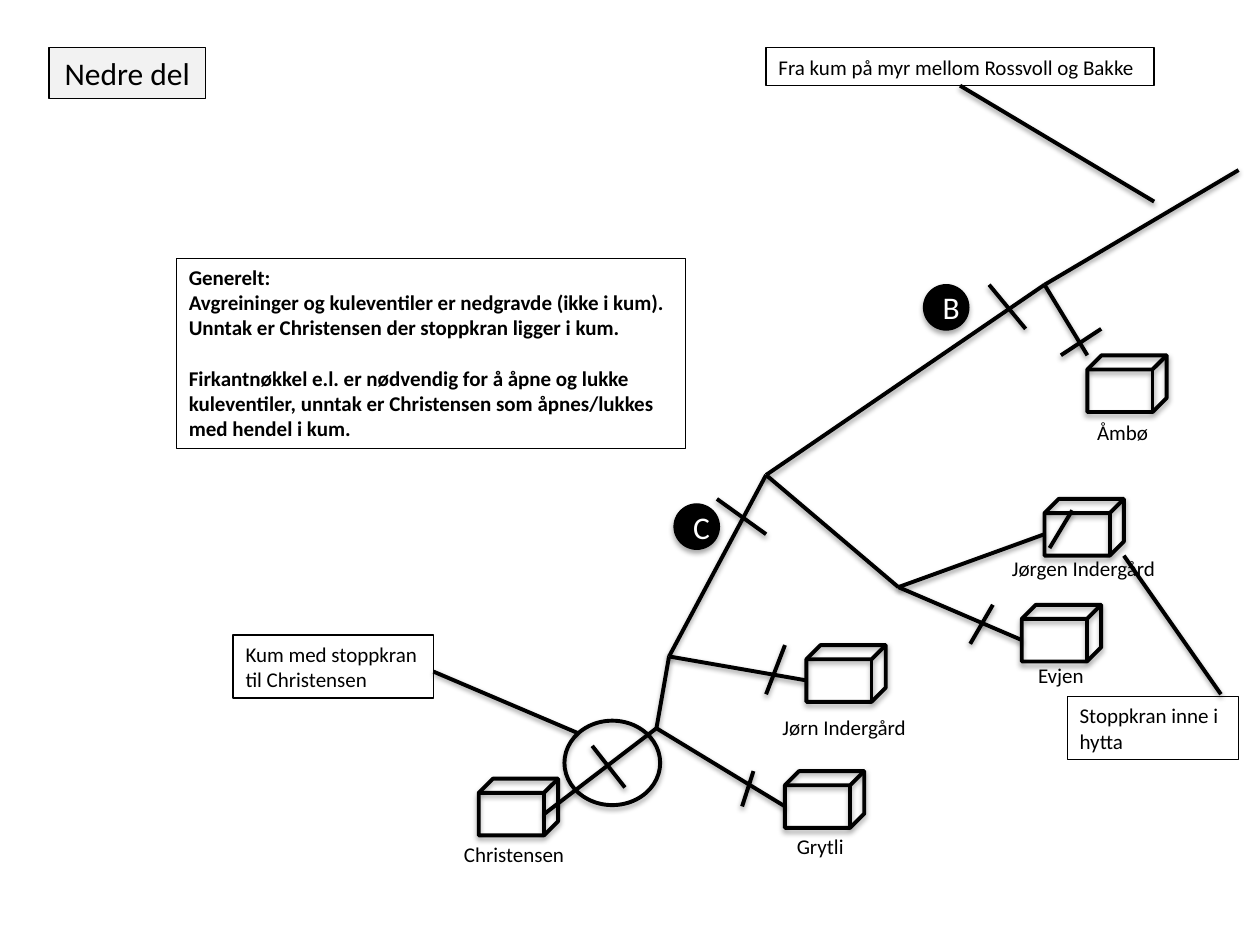
from dataclasses import dataclass
from typing import NamedTuple, Optional

from lxml.etree import SubElement
from pptx import Presentation
from pptx.dml.color import RGBColor
from pptx.enum.shapes import MSO_CONNECTOR as Connector, MSO_SHAPE as Shape
from pptx.enum.text import MSO_ANCHOR as Anchor, MSO_AUTO_SIZE as AutoSize, PP_ALIGN as Align
from pptx.oxml.ns import qn
from pptx.util import Inches, Pt


@dataclass(frozen=True)
class Theme:
    font: str = "Calibri"
    ink: RGBColor = RGBColor(0, 0, 0)
    paper: RGBColor = RGBColor(255, 255, 255)
    title_fill: RGBColor = RGBColor(0xF2, 0xF2, 0xF2)
    large: float = 18
    small: float = 12
    paragraph_gap: float = 14.5
    thin: float = 0.75
    thick: float = 2.25


class Point(NamedTuple):
    x: float
    y: float


class Box(NamedTuple):
    left: float
    top: float
    width: float
    height: float


class House(NamedTuple):
    name: str
    corner: Point
    label: Point
    label_width: float = 1.44


class Segment(NamedTuple):
    start: Point
    end: Point


@dataclass(frozen=True)
class Note:
    box: Box
    lines: tuple[str, ...]
    wrap: bool = False
    bold: bool = False
    new_block: Optional[int] = None  # line that opens a second block


THEME = Theme()
HOUSE_SIZE = (0.63, 0.45)
LABEL_HEIGHT = 0.3
BADGE_SIZE = 0.36

# Branching points of the water pipe
AMBO_BRANCH = Point(8.29, 2.26)
MIDDLE_BRANCH = Point(6.08, 3.77)
EAST_BRANCH = Point(7.13, 4.66)
JORN_BRANCH = Point(5.31, 5.21)
LAST_BRANCH = Point(5.21, 5.78)

PIPES = [
    Segment(Point(9.83, 1.35), AMBO_BRANCH),
    Segment(AMBO_BRANCH, Point(8.63, 2.82)),
    Segment(AMBO_BRANCH, MIDDLE_BRANCH),
    Segment(MIDDLE_BRANCH, EAST_BRANCH),
    Segment(EAST_BRANCH, Point(8.29, 4.24)),
    Segment(EAST_BRANCH, Point(8.11, 5.08)),
    Segment(MIDDLE_BRANCH, JORN_BRANCH),
    Segment(JORN_BRANCH, Point(6.4, 5.4)),
    Segment(JORN_BRANCH, LAST_BRANCH),
    Segment(LAST_BRANCH, Point(4.32, 6.46)),
    Segment(LAST_BRANCH, Point(6.23, 6.4)),
]
VALVES = [
    Segment(Point(7.85, 2.26), Point(8.14, 2.61)),
    Segment(Point(8.42, 2.82), Point(8.74, 2.61)),
    Segment(Point(7.7, 5.11), Point(7.88, 4.8)),
    Segment(Point(5.69, 3.96), Point(6.08, 4.24)),
    Segment(Point(6.23, 5.12), Point(6.08, 5.51)),
    Segment(Point(5.89, 6.4), Point(5.98, 6.12)),
    Segment(Point(4.7, 5.92), Point(4.96, 6.25)),
    Segment(Point(8.33, 4.35), Point(8.51, 4.05)),
]
POINTERS = [
    Segment(Point(7.62, 0.68), Point(9.16, 1.6)),
    Segment(Point(9.69, 5.51), Point(8.92, 4.41)),
    Segment(Point(3.44, 5.33), Point(4.59, 5.82)),
]
HOUSES = [
    House("Christensen", Point(3.8, 6.18), Point(3.46, 6.63), 1.24),
    House("Åmbø", Point(8.63, 2.82), Point(8.29, 3.28), 1.24),
    House("Jørgen Indergård", Point(8.29, 3.96), Point(7.88, 4.36)),
    House("Evjen", Point(8.11, 4.8), Point(7.7, 5.21)),
    House("Jørn Indergård", Point(6.4, 5.12), Point(5.98, 5.62)),
    House("Grytli", Point(6.23, 6.12), Point(5.89, 6.57), 1.24),
]
NOTES = [
    Note(Box(6.08, 0.38, 3.08, 0.3), ("Fra kum på myr mellom Rossvoll og Bakke",)),
    Note(Box(1.4, 2.05, 4.04, 1.51), (
        "Generelt:",
        "Avgreininger og kuleventiler er nedgravde (ikke i kum).",
        "Unntak er Christensen der stoppkran ligger i kum.",
        "Firkantnøkkel e.l. er nødvendig for å åpne og lukke",
        "kuleventiler, unntak er Christensen som åpnes/lukkes",
        "med hendel i kum.",
    ), bold=True, new_block=3),
    Note(Box(8.47, 5.53, 1.36, 0.5), ("Stoppkran inne i hytta",), wrap=True),
    Note(Box(1.85, 5.04, 1.59, 0.5), ("Kum med stoppkran", "til Christensen")),
]
BADGES = {"B": Point(7.33, 2.26), "C": Point(5.35, 4.0)}
MANHOLE = Box(4.48, 5.72, 0.76, 0.67)


def add_shadow(shape, opacity: int, distance: float) -> None:
    """Append a soft downward shadow; the outline must already be set."""
    effects = SubElement(shape.element.spPr, qn("a:effectLst"))
    shadow = SubElement(effects, qn("a:outerShdw"), blurRad=str(Pt(3.1)),
                        dist=str(Pt(distance)), dir="5400000", rotWithShape="0")
    color = SubElement(shadow, qn("a:srgbClr"), val=str(THEME.ink))
    SubElement(color, qn("a:alpha"), val=str(opacity * 1000))


def add_line(slide, segment: Segment) -> None:
    ends = [Inches(value) for point in segment for value in point]
    line = slide.shapes.add_connector(Connector.STRAIGHT, *ends)
    line.line.color.rgb = THEME.ink
    line.line.width = Pt(THEME.thick)
    add_shadow(line, 38, 1.6)


def add_outline(slide, kind: Shape, box: Box, width: float,
                fill: Optional[RGBColor] = None, shadow: bool = True):
    shape = slide.shapes.add_shape(kind, *map(Inches, box))
    if fill is None:
        shape.fill.background()
    else:
        shape.fill.solid()
        shape.fill.fore_color.rgb = fill
    shape.line.color.rgb = THEME.ink
    shape.line.width = Pt(width)
    if shadow:
        add_shadow(shape, 35, 1.8)
    else:
        shape.shadow.inherit = False
    return shape


def write(shape, lines: tuple[str, ...], size: float = THEME.small,
          color: RGBColor = THEME.ink, align: Align = Align.CENTER,
          bold: bool = False, wrap: bool = True, anchor: Anchor = Anchor.TOP,
          grow: bool = True) -> None:
    frame = shape.text_frame
    frame.text = "\n".join(lines)
    frame.word_wrap = wrap
    frame.vertical_anchor = anchor
    frame.auto_size = AutoSize.SHAPE_TO_FIT_TEXT if grow else AutoSize.NONE
    for paragraph in frame.paragraphs:
        paragraph.alignment = align
        paragraph.font.name = THEME.font
        paragraph.font.size = Pt(size)
        paragraph.font.bold = bold
        paragraph.font.color.rgb = color


def add_house(slide, house: House) -> None:
    add_outline(slide, Shape.CUBE, Box(*house.corner, *HOUSE_SIZE), THEME.thick)
    box = Box(*house.label, house.label_width, LABEL_HEIGHT)
    write(slide.shapes.add_textbox(*map(Inches, box)), (house.name,))


def add_note(slide, note: Note) -> None:
    shape = add_outline(slide, Shape.RECTANGLE, note.box, THEME.thin, shadow=False)
    write(shape, note.lines, align=Align.LEFT, bold=note.bold, wrap=note.wrap)
    if note.new_block is not None:
        shape.text_frame.paragraphs[note.new_block].space_before = Pt(THEME.paragraph_gap)


def add_badge(slide, letter: str, corner: Point) -> None:
    box = Box(*corner, BADGE_SIZE, BADGE_SIZE)
    badge = add_outline(slide, Shape.OVAL, box, THEME.thin, THEME.ink)
    write(badge, (letter,), THEME.large, THEME.paper, anchor=Anchor.MIDDLE, grow=False)


def main() -> None:
    presentation = Presentation()
    presentation.slide_width, presentation.slide_height = Inches(10), Inches(7.5)
    slide = presentation.slides.add_slide(presentation.slide_layouts[6])

    title = add_outline(slide, Shape.RECTANGLE, Box(0.39, 0.38, 1.24, 0.4),
                        THEME.thin, THEME.title_fill, shadow=False)
    write(title, ("Nedre del",), THEME.large)
    for house in HOUSES:
        add_house(slide, house)
    for segment in PIPES + VALVES + POINTERS:
        add_line(slide, segment)
    add_outline(slide, Shape.OVAL, MANHOLE, THEME.thick)
    for note in NOTES:
        add_note(slide, note)
    for letter, corner in BADGES.items():
        add_badge(slide, letter, corner)
    presentation.save("out.pptx")


if __name__ == "__main__":
    main()
